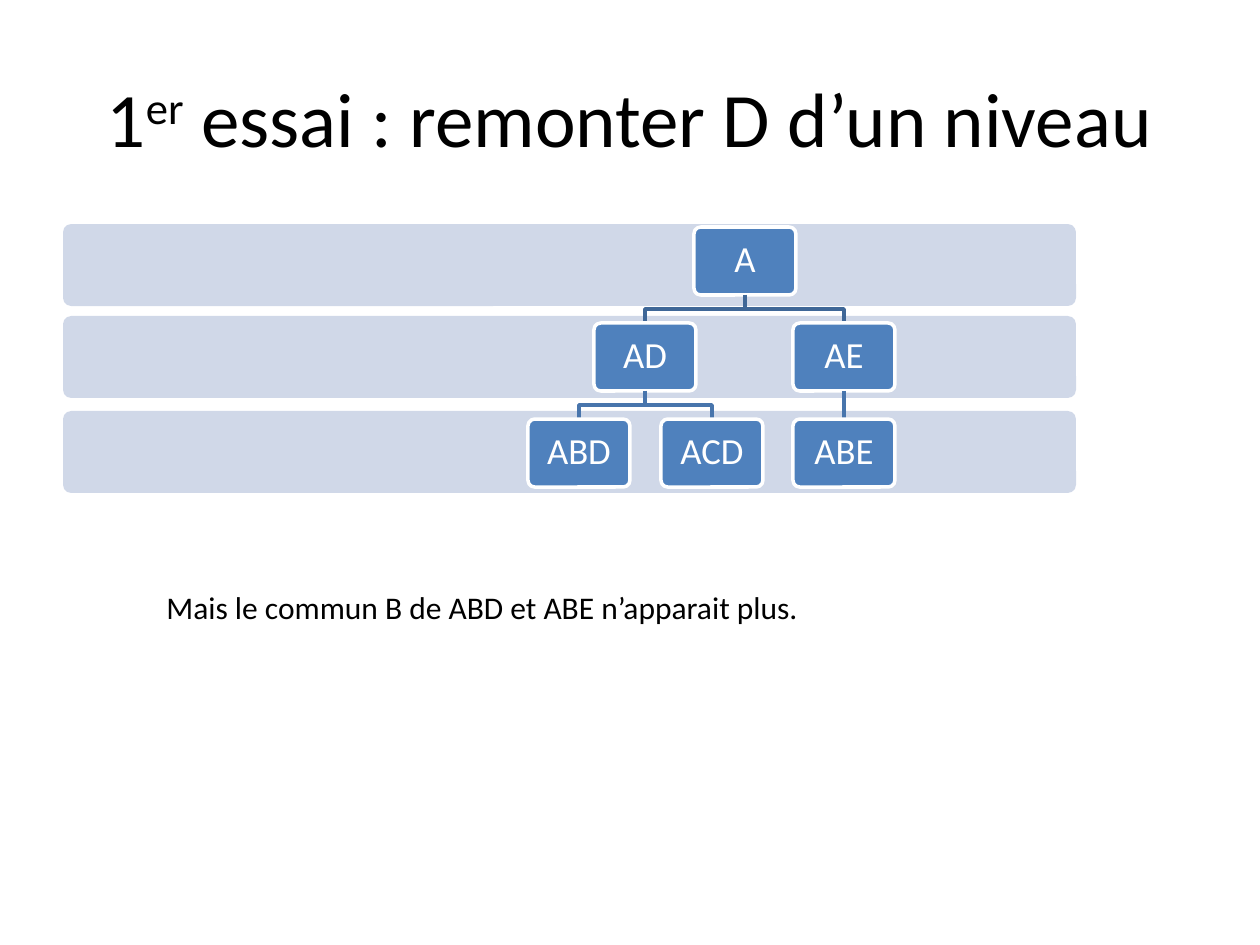
from dataclasses import dataclass

from lxml import etree
from pptx import Presentation
from pptx import util as u
from pptx.dml.color import RGBColor
from pptx.enum import shapes, text
from pptx.oxml.ns import qn

SCALE = 914400 / 126  # EMU per px


def px(n):
    return u.Emu(round(n * SCALE))


@dataclass(frozen=True)
class Theme:
    font: str = "Calibri"
    ink: str = "000000"
    paper: str = "FFFFFF"
    band: str = "D0D8E8"
    node: str = "4F81BD"
    links: tuple = ("3F6797", "4875AC")  # by depth of the parent
    title_size: int = 44
    node_size: int = 21
    note_size: int = 18
    line_width: int = 2


class Deck:
    def __init__(self, theme, width, height):
        self.theme = theme
        self.prs = Presentation()
        self.prs.slide_width, self.prs.slide_height = px(width), px(height)
        self.s = self.prs.slides.add_slide(self.prs.slide_layouts[6])

    def style(self, p, size, color, align):
        p.alignment = align
        for r in p.runs:
            r.font.name = self.theme.font
            r.font.size = u.Pt(size)
            r.font.color.rgb = RGBColor.from_string(color)

    def label(self, box, runs, size, align, anchor):
        """Text box from (text, baseline) pairs; baseline in 1/1000 %."""
        sp = self.s.shapes.add_textbox(*map(px, box))
        tf = sp.text_frame
        tf.word_wrap = True
        tf.vertical_anchor = anchor
        p = tf.paragraphs[0]
        for words, baseline in runs:
            r = p.add_run()
            r.text = words
            if baseline:
                r._r.get_or_add_rPr().set("baseline", str(baseline))
        self.style(p, size, self.theme.ink, align)

    def rounded(self, box, fill):
        sp = self.s.shapes.add_shape(
            shapes.MSO_SHAPE.ROUNDED_RECTANGLE, *map(px, box))
        sp.adjustments[0] = 0.1
        sp.shadow.inherit = False
        sp.fill.solid()
        sp.fill.fore_color.rgb = RGBColor.from_string(fill)
        sp.line.fill.background()
        return sp

    def outline(self, sp, color):
        sp.line.color.rgb = RGBColor.from_string(color)
        sp.line.width = u.Pt(self.theme.line_width)

    def node(self, box, name):
        sp = self.rounded(box, self.theme.node)
        self.outline(sp, self.theme.paper)
        tf = sp.text_frame
        tf.text = name
        tf.word_wrap = True
        tf.vertical_anchor = text.MSO_ANCHOR.MIDDLE
        tf.margin_left = tf.margin_right = px(11)
        tf.margin_top = tf.margin_bottom = px(11)
        p = tf.paragraphs[0]
        p.line_spacing = 0.9
        self.style(p, self.theme.node_size, self.theme.paper, text.PP_ALIGN.CENTER)

    def link(self, x1, y1, x2, y2, color):
        """Straight line, or an elbow that bends halfway down."""
        if x1 == x2:
            sp = self.s.shapes.add_connector(
                shapes.MSO_CONNECTOR.STRAIGHT, *map(px, (x1, y1, x2, y2)))
            etree.SubElement(sp._element.spPr, qn("a:effectLst"))
        else:
            mid = (y1 + y2) / 2
            fb = self.s.shapes.build_freeform(px(x1), px(y1))
            points = [(x1, mid), (x2, mid), (x2, y2)]
            fb.add_line_segments([(px(x), px(y)) for x, y in points], close=False)
            sp = fb.convert_to_shape()
            sp.shadow.inherit = False
            sp.fill.background()
        self.outline(sp, color)


# Tree: name, centre x, depth, parent
TREE = [
    ("A", 745, 0, None),
    ("AD", 645, 1, "A"),
    ("ABD", 579, 2, "AD"),
    ("ACD", 712, 2, "AD"),
    ("AE", 844, 1, "A"),
    ("ABE", 844, 2, "AE"),
]
BAND_TOPS = (224, 316, 411)
NODE_W, NODE_H = 102, 68
NODE_TOP, NODE_STEP = 227, 96


def main():
    theme = Theme()
    deck = Deck(theme, 1260, 945)

    # Title
    deck.label((63, 38, 1134, 158),
               [("1", 0), ("er", 30000), (" essai : remonter D d’un niveau", 0)],
               theme.title_size, text.PP_ALIGN.CENTER, text.MSO_ANCHOR.MIDDLE)

    # Level bands
    for top in BAND_TOPS:
        deck.rounded((63, top, 1013, 82), theme.band)

    # Nodes, each with the link from its parent
    centres = {name: x for name, x, _, _ in TREE}
    for name, x, depth, parent in TREE:
        top = NODE_TOP + depth * NODE_STEP
        if parent:
            deck.link(centres[parent], top - NODE_STEP + NODE_H, x, top,
                      theme.links[depth - 1])
        deck.node((x - NODE_W / 2, top, NODE_W, NODE_H), name)

    # Remark
    deck.label((154, 582, 824, 50),
               [("Mais le commun B de ABD et ABE n’apparait plus.", 0)],
               theme.note_size, text.PP_ALIGN.LEFT, text.MSO_ANCHOR.TOP)

    deck.prs.save("out.pptx")


if __name__ == "__main__":
    main()
